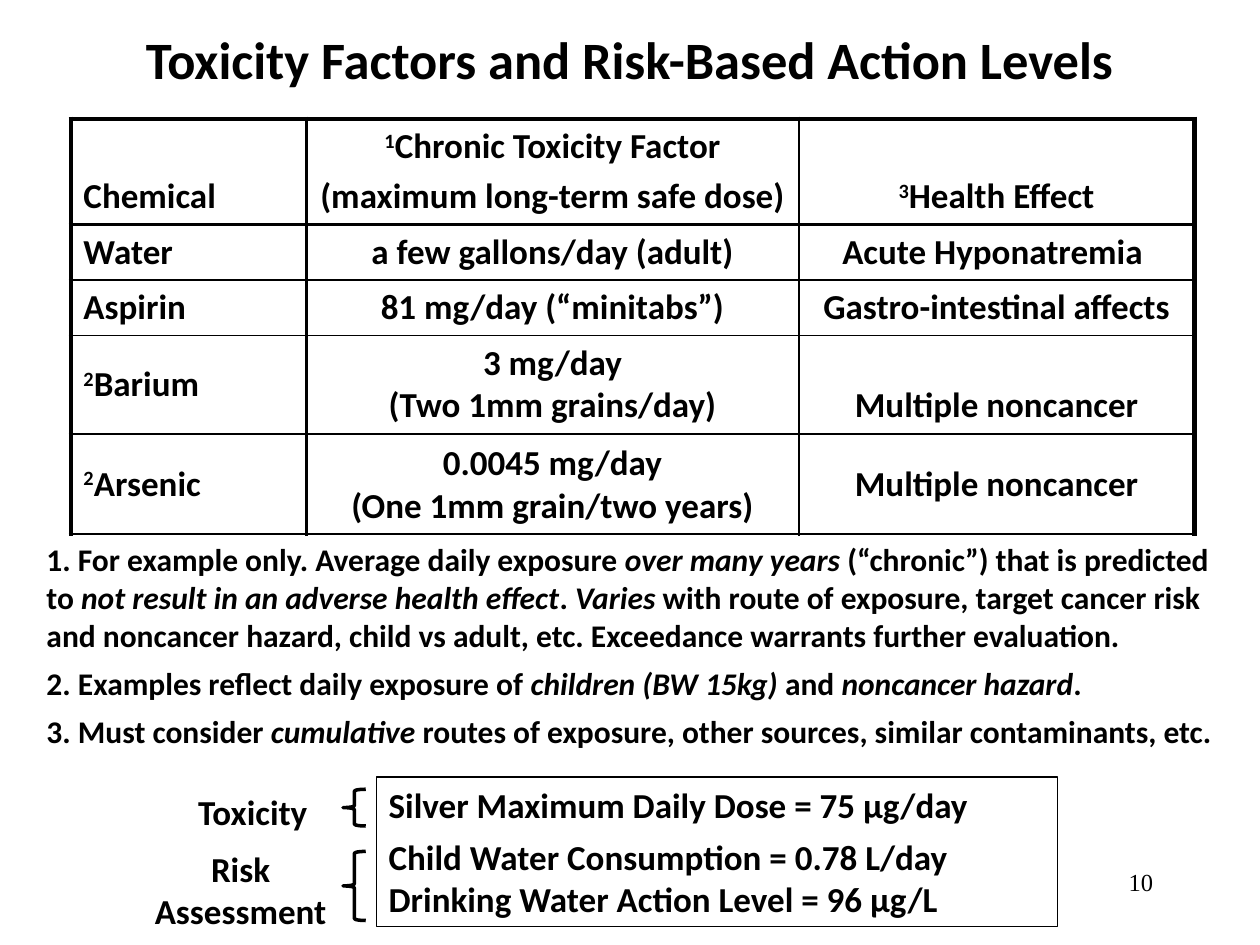
import pptx
import pptx.dml.color
import pptx.enum.shapes
import pptx.enum.text
import pptx.oxml.ns
import pptx.util
from lxml import etree
from typing import NamedTuple

Pt = pptx.util.Pt
qn = pptx.oxml.ns.qn
ALIGN = pptx.enum.text.PP_ALIGN
ANCHOR = pptx.enum.text.MSO_ANCHOR
SHAPE = pptx.enum.shapes.MSO_SHAPE
COLORS = {"ink": "000000"}


class Box(NamedTuple):
    x: float
    y: float
    w: float
    h: float


class Label(NamedTuple):
    box: Box
    lines: list[str]
    fmt: dict


class Cell(NamedTuple):
    lines: list[str]
    anchor: object = ANCHOR.BOTTOM
    before: tuple = (4, 0)


def rgb(name: str):
    return pptx.dml.color.RGBColor.from_string(COLORS[name])


def write(tf, lines, size=20, font="Calibri", bold=True, align=ALIGN.LEFT,
          anchor=ANCHOR.TOP, wrap=True, before=(), after=()) -> None:
    """Write one paragraph per line; *...* is italic and ^...^ superscript."""
    tf.word_wrap = wrap
    tf.vertical_anchor = anchor
    for n, line in enumerate(lines):
        p = tf.paragraphs[0] if n == 0 else tf.add_paragraph()
        p.alignment = align
        p.space_before = Pt(before[n] if n < len(before) else 0)
        p.space_after = Pt(after[n] if n < len(after) else 0)
        for i, part in enumerate(line.split("*")):
            for j, text in enumerate(part.split("^")):
                if not text:
                    continue
                r = p.add_run()
                r.text = text
                r.font.size, r.font.name = Pt(size), font
                r.font.bold, r.font.italic = bold, i % 2 == 1
                r.font.color.rgb = rgb("ink")
                if j % 2:
                    r.font._element.set("baseline", "30000")


def add_label(s, label: Label) -> None:
    sp = s.shapes.add_textbox(*map(Pt, label.box))
    write(sp.text_frame, label.lines, **label.fmt)


def add_outline(s, kind, box: Box, width: float):
    sp = s.shapes.add_shape(kind, *map(Pt, box))
    sp.shadow.inherit = False
    sp.fill.background()
    sp.line.color.rgb = rgb("ink")
    sp.line.width = Pt(width)
    return sp


def set_borders(cell, **widths: float) -> None:
    tcPr = cell._tc.get_or_add_tcPr()
    for side, width in widths.items():
        ln = etree.SubElement(tcPr, qn(f"a:ln{side}"), w=str(int(Pt(width))))
        fill = etree.SubElement(ln, qn("a:solidFill"))
        etree.SubElement(fill, qn("a:srgbClr"), val=COLORS["ink"])


def add_grid(s, x, y, cols, rows, cells, v_edges, h_edges) -> None:
    frame = s.shapes.add_table(len(rows), len(cols), Pt(x), Pt(y),
                               Pt(sum(cols)), Pt(sum(rows)))
    table = frame.table
    table.first_row = table.horz_banding = False
    for c, width in enumerate(cols):
        table.columns[c].width = Pt(width)
    for r, height in enumerate(rows):
        table.rows[r].height = Pt(height)
        for c, item in enumerate(cells[r]):
            cell = table.cell(r, c)
            set_borders(cell, L=v_edges[c], R=v_edges[c + 1],
                        T=h_edges[r], B=h_edges[r + 1])
            cell.fill.background()
            write(cell.text_frame, item.lines, before=item.before,
                  align=ALIGN.CENTER if c else ALIGN.LEFT)
            cell.vertical_anchor = item.anchor


CELLS = [
    [Cell(["Chemical"]),
     Cell(["^1^Chronic Toxicity Factor", "(maximum long-term safe dose)"],
          before=(4, 4)),
     Cell(["^3^Health Effect"])],
    [Cell(["Water"], ANCHOR.MIDDLE),
     Cell(["a few gallons/day (adult)"], before=()),
     Cell(["Acute Hyponatremia "])],
    [Cell(["Aspirin"], ANCHOR.MIDDLE),
     Cell(["81 mg/day (“minitabs”)"]),
     Cell(["Gastro-intestinal affects"])],
    [Cell(["^2^Barium"], ANCHOR.MIDDLE),
     Cell(["3 mg/day", "(Two 1mm grains/day)"], before=()),
     Cell(["Multiple noncancer"])],
    [Cell(["^2^Arsenic"], ANCHOR.MIDDLE),
     Cell(["0.0045 mg/day", "(One 1mm grain/two years)"]),
     Cell(["Multiple noncancer"], ANCHOR.MIDDLE)],
]

NOTES = [
    "1. For example only. Average daily exposure *over many years *(“chronic”) "
    "that is predicted to *not result in an adverse health effect*. *Varies* "
    "with route of exposure, target cancer risk and noncancer hazard, child vs "
    "adult, etc. Exceedance warrants further evaluation.",
    "2. Examples reflect daily exposure of *children (BW 15kg) *and "
    "*noncancer hazard*.",
    "3. Must consider *cumulative* routes of exposure, other sources, similar "
    "contaminants, etc.",
]

SIDE = dict(align=ALIGN.CENTER, wrap=False)
LABELS = [
    Label(Box(12, 6, 696, 54.5), ["Toxicity Factors and Risk-Based Action Levels"],
          dict(size=30, align=ALIGN.CENTER, anchor=ANCHOR.MIDDLE)),
    Label(Box(19.5, 305, 681, 128), NOTES, dict(size=18, after=(6, 6))),
    Label(Box(106, 448, 77, 31.5), ["Toxicity"], SIDE),
    Label(Box(80.5, 481, 114, 55.5), ["Risk", "Assessment"], SIDE),
    Label(Box(516, 492, 150, 36), ["10"],
          dict(size=14, font="Times New Roman", bold=False, align=ALIGN.RIGHT)),
]

BRACES = [Box(196, 451, 13, 21), Box(196, 486.5, 13, 39.5)]


def main() -> None:
    prs = pptx.Presentation()
    prs.slide_width, prs.slide_height = Pt(720), Pt(540)
    s = prs.slides.add_slide(prs.slide_layouts[6])

    # Toxicity factor table
    add_grid(s, 40.5, 68, cols=[134.5, 281.5, 226], rows=[60, 31.5, 31.5, 56, 57.5],
             cells=CELLS, v_edges=[3, 2.25, 1.5, 3],
             h_edges=[3, 2.25, 1, 1, 1.5, 1.5])

    # Title, notes, side labels and page number
    for label in LABELS:
        add_label(s, label)

    # Worked example for silver
    sp = add_outline(s, SHAPE.RECTANGLE, Box(215, 444, 389.5, 85.5), 0.75)
    write(sp.text_frame, ["Silver Maximum Daily Dose = 75 µg/day",
                          "Child Water Consumption = 0.78 L/day",
                          "Drinking Water Action Level = 96 µg/L"], after=(6,))
    for box in BRACES:
        add_outline(s, SHAPE.LEFT_BRACE, box, 2)

    prs.save("out.pptx")


if __name__ == "__main__":
    main()
